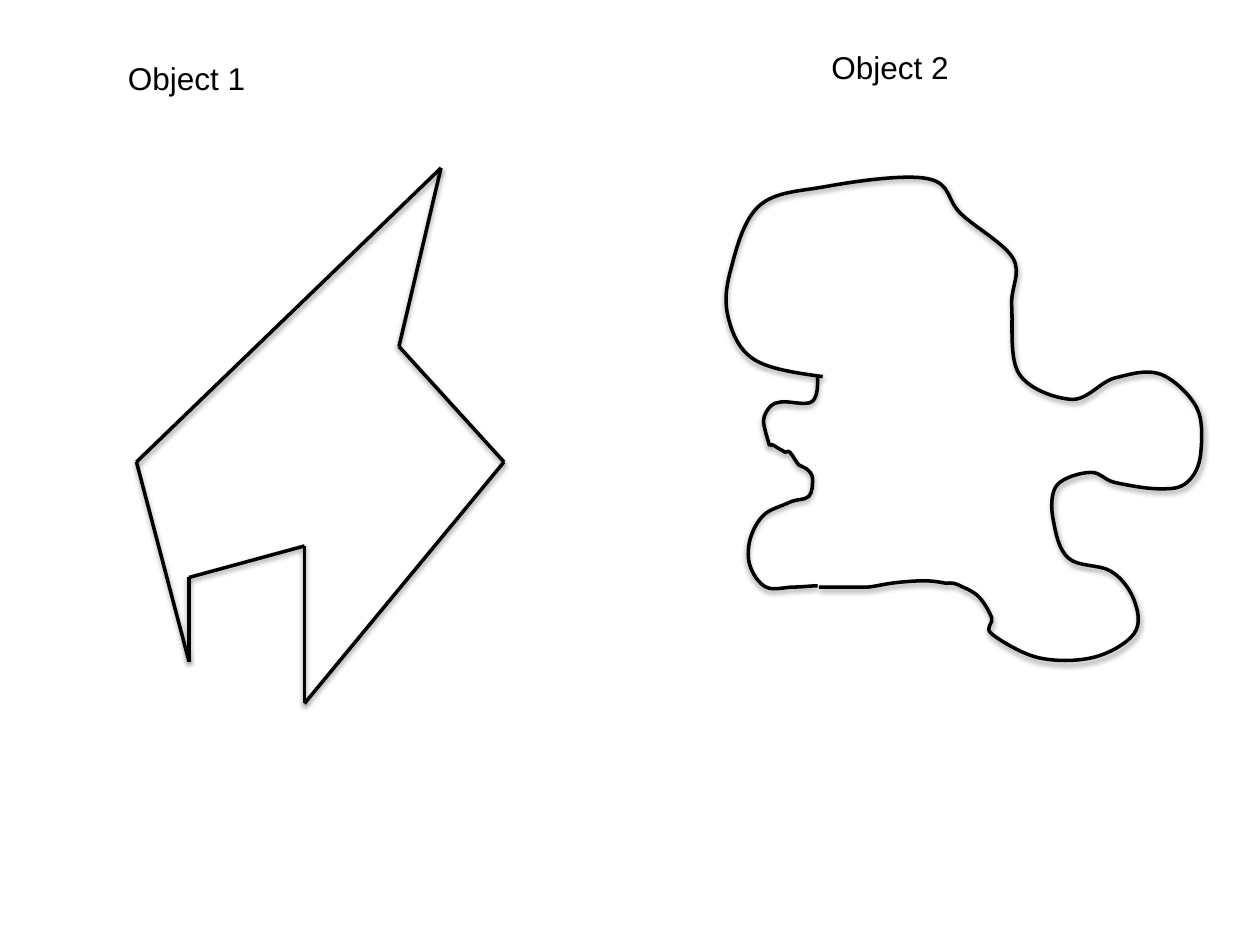
import pptx
import pptx.util
import pptx.dml.color
import pptx.enum.shapes
import pptx.enum.text
import pptx.oxml
import pptx.oxml.ns

COLORS = {"ink": "000000"}
COLS, ROWS = 120, 90  # coarse grid: 12 cells to the inch
FINE = 100            # fine grid for curves: 100 cells to the inch

# Object 1: corners as (column, row), in order around the shape
CORNERS = {
    "left": (13, 44), "tip": (42, 16), "notch": (38, 33), "right": (48, 44),
    "front foot": (29, 67), "front leg": (29, 52),
    "back leg": (18, 55), "back foot": (18, 63),
}

# Object 2: the points each part passes through, on the fine grid
PARTS = {
    "head": [(653, 299), (598, 285), (578, 252), (580, 214), (603, 163),
             (656, 148), (737, 142), (762, 169)],
    "back": [(804, 205), (803, 243), (809, 297), (850, 317)],
    "arm": [(885, 300), (921, 297), (950, 324), (953, 360), (942, 383),
            (920, 388), (885, 383), (866, 375), (839, 385)],
    "leg": [(836, 413), (848, 443), (881, 453), (900, 476), (900, 503),
            (867, 522), (824, 522), (787, 503), (787, 490)],
    "belly": [(775, 472), (760, 464), (751, 463)],
    "base": [(751, 463), (733, 461), (707, 463), (688, 466), (682, 466)],
    "base end": [(682, 466), (650, 466)],
    "chin": [(649, 299), (644, 319), (620, 319), (612, 322), (606, 334), (611, 354)],
    "tail": [(649, 465), (630, 466), (608, 466), (595, 448), (596, 426),
             (606, 409), (626, 399), (642, 394)],
    "ridge": [(645, 380), (640, 372), (634, 369), (627, 359), (623, 359),
              (618, 356), (613, 353), (611, 354)],
}
# Each stroke is a list of smooth runs; each run joins its parts in order
STROKES = [
    [["head", "back", "arm", "leg", "belly"], ["base"], ["base end"]],
    [["chin"]],
    [["tail", "ridge"]],
]

SHADOW = (
    '<a:effectLst %s><a:outerShdw blurRad="40000" dist="20000" dir="5400000" '
    'rotWithShape="0"><a:srgbClr val="%s"><a:alpha val="38000"/></a:srgbClr>'
    '</a:outerShdw></a:effectLst>'
) % (pptx.oxml.ns.nsdecls("a"), COLORS["ink"])


def smooth(points):
    """Give (handle, handle, end point) for each step of a smooth run.

    At an inner point the tangent is parallel to the line between its two
    neighbours, and each handle is a sixth of that line long.
    """
    def handle(i, sign):
        (x0, y0), (x, y), (x1, y1) = points[i - 1:i + 2]
        return x + sign * (x1 - x0) / 6, y + sign * (y1 - y0) / 6

    last = len(points) - 1
    steps = []
    for i in range(last):
        arrive = handle(i + 1, -1) if i + 1 < last else points[last]
        if i > 0:
            leave = handle(i, 1)
        else:  # a run starts halfway towards its first arriving handle
            leave = tuple((a + b) / 2 for a, b in zip(points[0], arrive))
        steps.append((leave, arrive, points[i + 1]))
    return steps


class Sketch:
    line_width = pptx.util.Pt(2)
    font = {"name": "Arial", "size": pptx.util.Pt(18)}
    frame = {"word_wrap": True,
             "auto_size": pptx.enum.text.MSO_AUTO_SIZE.SHAPE_TO_FIT_TEXT}

    def __init__(self, prs):
        self.s = prs.slides.add_slide(prs.slide_layouts[6])
        self.col = prs.slide_width / COLS
        self.row = prs.slide_height / ROWS

    def at(self, col, row):
        return round(col * self.col), round(row * self.row)

    def ink(self, sp):
        sp.line.color.rgb = pptx.dml.color.RGBColor.from_string(COLORS["ink"])
        sp.line.width = self.line_width
        sp._element.spPr.append(pptx.oxml.parse_xml(SHADOW))

    def side(self, start, end):
        kind = pptx.enum.shapes.MSO_CONNECTOR.STRAIGHT
        self.ink(self.s.shapes.add_connector(kind, *self.at(*start), *self.at(*end)))

    def stroke(self, runs):
        steps = [step for points in runs for step in smooth(points)]
        fb = self.s.shapes.build_freeform(*runs[0][0], scale=pptx.util.Inches(1) / FINE)
        for step in steps:
            fb.add_line_segments(step, close=False)
        sp = fb.convert_to_shape()
        sp.fill.background()
        self.ink(sp)
        # Join the three segments of every step into one cubic curve
        qn = pptx.oxml.ns.qn
        outline = sp._element.spPr.find(".//" + qn("a:path"))
        segments = outline.findall(qn("a:lnTo"))
        for i in range(0, len(segments), 3):
            bezier = outline.makeelement(qn("a:cubicBezTo"), {})
            for segment in segments[i:i + 3]:
                bezier.append(segment[0])
                outline.remove(segment)
            outline.append(bezier)

    def label(self, text, col, row, cols=28, rows=5):
        tf = self.s.shapes.add_textbox(*self.at(col, row), *self.at(cols, rows)).text_frame
        for key, value in self.frame.items():
            setattr(tf, key, value)
        r = tf.paragraphs[0].add_run()
        r.text = text
        for key, value in self.font.items():
            setattr(r.font, key, value)
        r.font.color.rgb = pptx.dml.color.RGBColor.from_string(COLORS["ink"])


def main():
    prs = pptx.Presentation()
    prs.slide_width, prs.slide_height = pptx.util.Inches(10), pptx.util.Inches(7.5)
    sketch = Sketch(prs)

    # Object 1: a straight side from each corner to the next, back to the first
    corners = list(CORNERS.values())
    for start, end in zip(corners, corners[1:] + corners[:1]):
        sketch.side(start, end)

    # Object 2: smooth strokes through the parts
    for stroke in STROKES:
        sketch.stroke([[point for name in run for point in PARTS[name]]
                       for run in stroke])

    # Labels
    sketch.label("Object 1", 11, 5)
    sketch.label("Object 2", 78, 4)

    prs.save("out.pptx")


if __name__ == "__main__":
    main()
